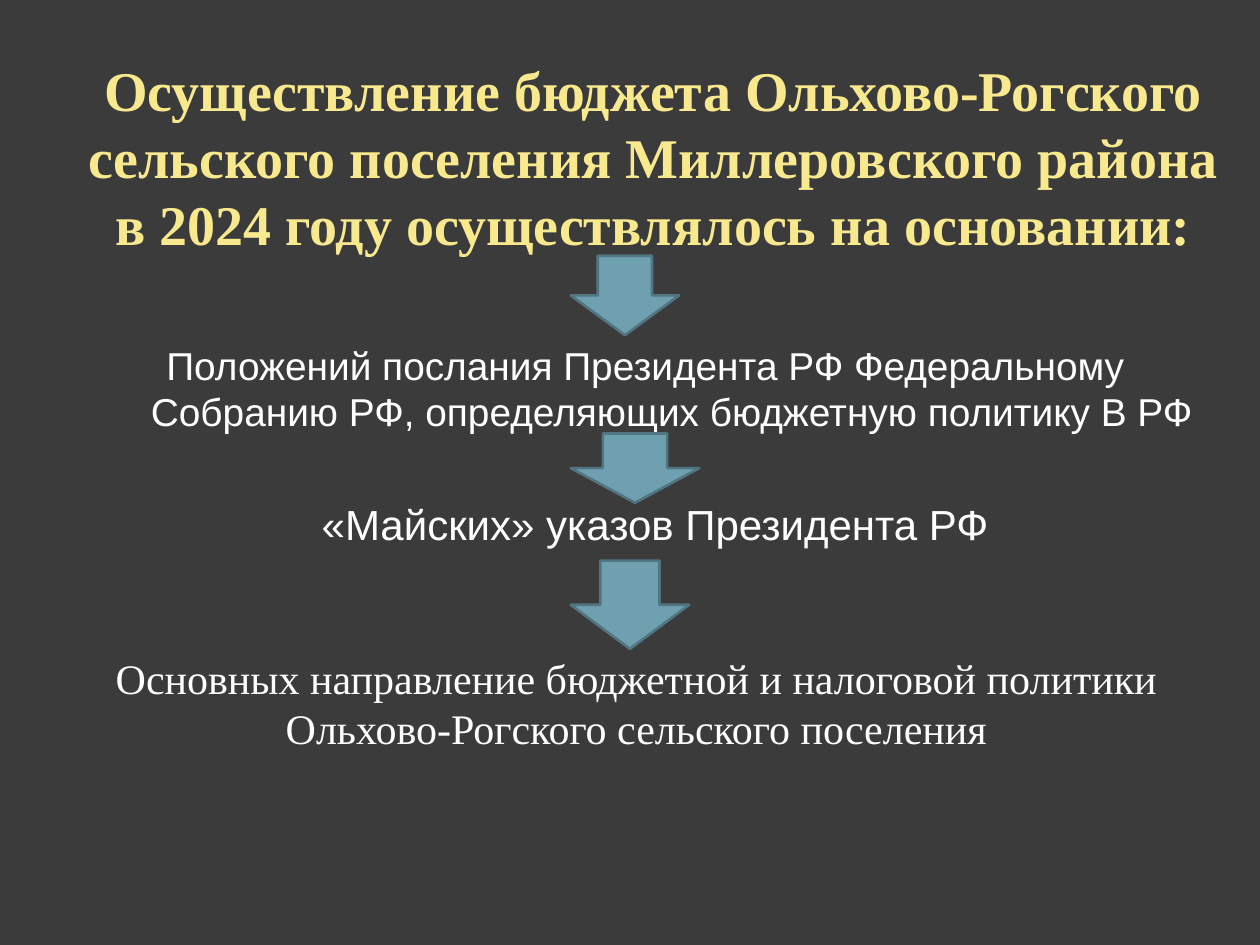
from pptx import Presentation
from pptx.dml.color import RGBColor
from pptx.enum.shapes import MSO_SHAPE as Shape
from pptx.enum.text import MSO_ANCHOR as Anchor, PP_ALIGN as Align
from pptx.util import Inches, Pt

COLORS = {
    "background": "3B3B3B",
    "heading": "F9E98E",
    "text": "FFFFFF",
    "arrow": "6EA0B0",
    "arrow_edge": "517682",
}

# text, (left, top, width, height), font, size, color, bold, hanging indent
TEXTS = [
    ("Осуществление бюджета Ольхово-Рогского сельского поселения "
     "Миллеровского района в 2024 году осуществлялось на основании:",
     (0.55, 0.39, 9.27, 1.88), "Times New Roman", 32, "heading", True, False),
    ("Положений послания Президента РФ Федеральному Собранию РФ, "
     "определяющих бюджетную политику В РФ",
     (0.55, 2.66, 9.11, 1), "Arial", 22.2, "text", False, True),
    ("«Майских» указов Президента РФ",
     (0.78, 3.91, 8.8, 0.97), "Arial", 24, "text", False, True),
    ("Основных направление бюджетной и налоговой политики "
     "Ольхово-Рогского сельского поселения",
     (0.55, 5.13, 9, 1.25), "Times New Roman", 24, "text", False, False),
]

# top, width, height
ARROW_LEFT = 4.53
ARROWS = [(2.03, 0.86, 0.63), (3.44, 1.02, 0.55), (4.45, 0.94, 0.7)]


def color(name):
    return RGBColor.from_string(COLORS[name])


def add_text(page, text, place, font, size, tint, bold, hanging):
    box = page.shapes.add_textbox(*map(Inches, place))
    frame = box.text_frame
    frame.word_wrap = True
    frame.vertical_anchor = Anchor.TOP
    frame.margin_left = frame.margin_right = Inches(0.1)
    frame.margin_top = frame.margin_bottom = Inches(0.05)
    frame.text = text
    para = frame.paragraphs[0]
    para.alignment = Align.CENTER
    if hanging:
        properties = para._p.get_or_add_pPr()
        properties.set("marL", str(Inches(0.46)))
        properties.set("indent", str(Inches(-0.42)))
    span = para.runs[0]
    span.font.name = font
    span.font.size = Pt(size)
    span.font.bold = bold
    span.font.color.rgb = color(tint)


def add_arrow(page, top, width, height):
    arrow = page.shapes.add_shape(
        Shape.DOWN_ARROW, *map(Inches, (ARROW_LEFT, top, width, height)))
    arrow.shadow.inherit = False
    arrow.fill.solid()
    arrow.fill.fore_color.rgb = color("arrow")
    arrow.line.color.rgb = color("arrow_edge")
    arrow.line.width = Pt(1.5)


def main():
    deck = Presentation()
    deck.slide_width, deck.slide_height = Inches(10), Inches(7.5)
    page = deck.slides.add_slide(deck.slide_layouts[6])
    page.background.fill.solid()
    page.background.fill.fore_color.rgb = color("background")

    # Heading and the three grounds
    for item in TEXTS:
        add_text(page, *item)

    # Arrows leading from one ground to the next
    for item in ARROWS:
        add_arrow(page, *item)

    deck.save("out.pptx")


if __name__ == "__main__":
    main()
